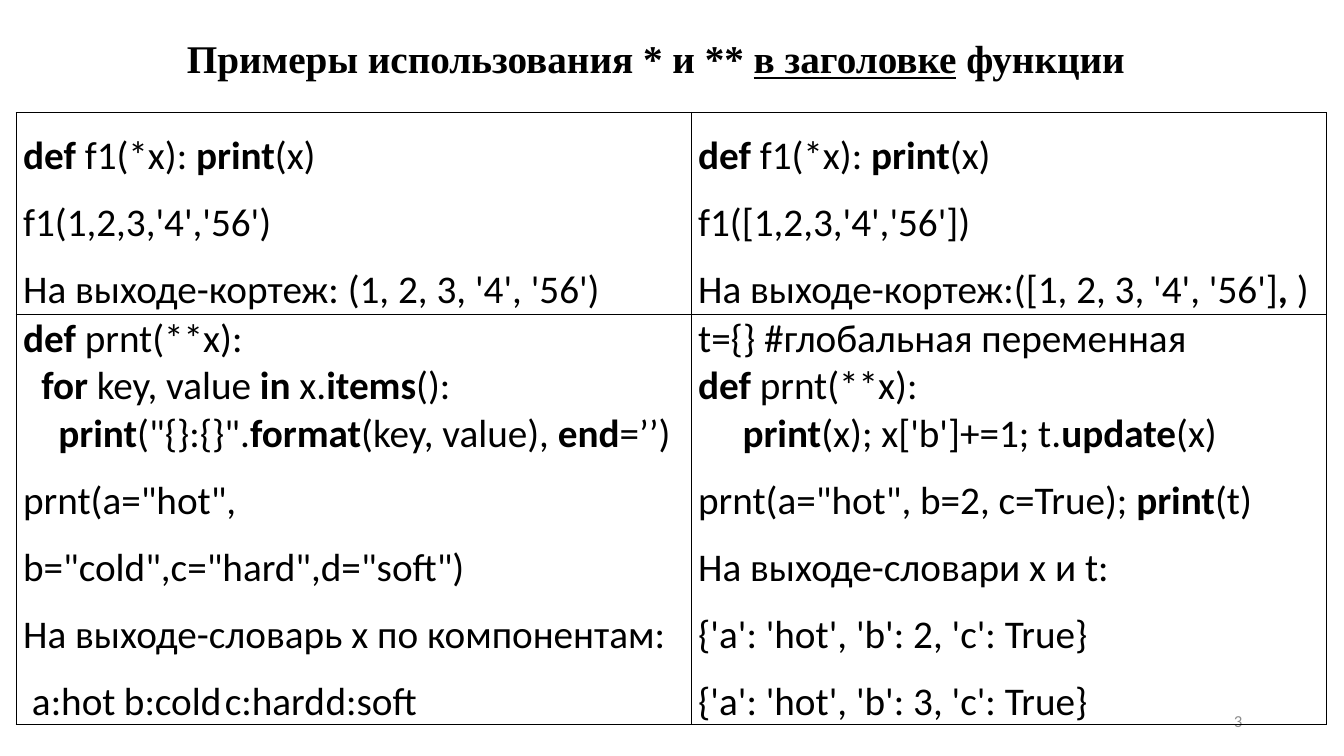
import pptx
import pptx.dml.color
import pptx.enum.text
import pptx.oxml
import pptx.oxml.ns
import pptx.util

Inches = pptx.util.Inches
ALIGN = pptx.enum.text.PP_ALIGN
ANCHOR = pptx.enum.text.MSO_ANCHOR
COLORS = {"ink": "000000", "muted": "8C8C8C"}
LOOSE = {"gap": 1.4}
JUST = {"gap": 1.4, "align": ALIGN.JUSTIFY}
HEAD = "|def| f1(*x): |print|(x)"
CELLS = [
    [
        [
            (HEAD, JUST),
            ("f1(1,2,3,'4','56')", JUST),
            ("На выходе-кортеж: (1, 2, 3, '4', '56')", JUST),
        ],
        [
            (HEAD, JUST),
            ("f1([1,2,3,'4','56'])", JUST),
            ("На выходе-кортеж:([1, 2, 3, '4', '56']|,| )", JUST),
        ],
    ],
    [
        [
            ("|def |prnt(**x):", {}),
            ("|for |key, value |in |x.|items|():", {"indent": 0.18}),
            ('|print|("{}:{}".|format|(key, value), |end|=’’)', {"indent": 0.35}),
            ('prnt(a="hot", b="cold",c="hard",d="soft")', LOOSE),
            ("На выходе-словарь x по компонентам:", LOOSE),
            (" a:hot\tb:cold\tc:hard\td:soft", {"gap": 1.4, "tabs": (1.18, 2.41, 3.67)}),
        ],
        [
            ("t={} #глобальная переменная", {}),
            ("|def |prnt(**x):", {}),
            ("|print|(x); x['b']+=1; t.|update|(x)", {"indent": 0.44}),
            ('prnt(a="hot", b=2, c=True); |print|(t)', JUST),
            ("На выходе-словари x и t:", JUST),
            ("{'a': 'hot', 'b': 2, 'c': True}", JUST),
            ("{'a': 'hot', 'b': 3, 'c': True}", JUST),
        ],
    ],
]


def write(para, text, size=28, font="Calibri", color="ink", align=ALIGN.LEFT,
          gap=1.0, indent=0, tabs=(), bold=False, mark="bold"):
    """Fill a paragraph; bars in the text switch the marked style on and off."""
    para.alignment = align
    para.line_spacing = gap
    props = para._p.get_or_add_pPr()
    props.set("marL", str(Inches(indent)))
    props.set("indent", "0")
    if tabs:
        stops = pptx.oxml.ns.qn("a:tabLst")
        stops = props.makeelement(stops, {})
        props.append(stops)
        for stop in tabs:
            item = stops.makeelement(pptx.oxml.ns.qn("a:tab"),
                                     {"pos": str(Inches(stop)), "algn": "l"})
            stops.append(item)
    for spot, part in enumerate(text.split("|")):
        if not part:
            continue
        run = para.add_run()
        run.text = part
        run.font.size = pptx.util.Pt(size)
        run.font.name = font
        run.font.bold = bold
        run.font.color.rgb = pptx.dml.color.RGBColor.from_string(COLORS[color])
        if spot % 2:
            setattr(run.font, mark, True)


def label(slide, box, text, anchor=ANCHOR.TOP, **form):
    """Place one line of text in a box."""
    frame = slide.shapes.add_textbox(*map(Inches, box)).text_frame
    frame.word_wrap = True
    frame.vertical_anchor = anchor
    write(frame.paragraphs[0], text, **form)


def border(cell):
    """Draw a thin line on all sides of a cell."""
    props = cell._tc.get_or_add_tcPr()
    for spot, side in enumerate("LRTB"):
        props.insert(spot, pptx.oxml.parse_xml(
            f'<a:ln{side} {pptx.oxml.ns.nsdecls("a")} w="12700"><a:solidFill>'
            f'<a:srgbClr val="{COLORS["ink"]}"/></a:solidFill></a:ln{side}>'))


def grid(slide, box, cols, rows):
    """Place the table of code samples in a box."""
    table = slide.shapes.add_table(len(rows), len(cols), *map(Inches, box)).table
    table.first_row = table.horz_banding = False
    for col, share in zip(table.columns, cols):
        col.width = Inches(box[2] * share)
    for row, share in zip(table.rows, rows):
        row.height = Inches(box[3] * share)
    for row, line in zip(table.rows, CELLS):
        for cell, paras in zip(row.cells, line):
            cell.margin_left = cell.margin_right = Inches(0.07)
            cell.margin_top = cell.margin_bottom = 0
            cell.fill.background()
            border(cell)
            frame = cell.text_frame
            for spot, (text, form) in enumerate(paras):
                para = frame.add_paragraph() if spot else frame.paragraphs[0]
                write(para, text, **form)


def main():
    """Build the slide and save it."""
    deck = pptx.Presentation()
    deck.slide_width, deck.slide_height = Inches(13.33), Inches(7.5)
    slide = deck.slides.add_slide(deck.slide_layouts[6])
    label(slide, (9.42, 6.95, 3, 0.4), "3", anchor=ANCHOR.MIDDLE,
          size=12, color="muted", align=ALIGN.RIGHT)
    grid(slide, (0.16, 1.12, 13, 6.07), (0.515, 0.485), (0.33, 0.67))
    label(slide, (1.52, 0.29, 9.97, 0.57),
          "Примеры использования * и ** |в заголовке| функции",
          font="Times New Roman", align=ALIGN.CENTER, bold=True, mark="underline")
    deck.save("out.pptx")


if __name__ == "__main__":
    main()
